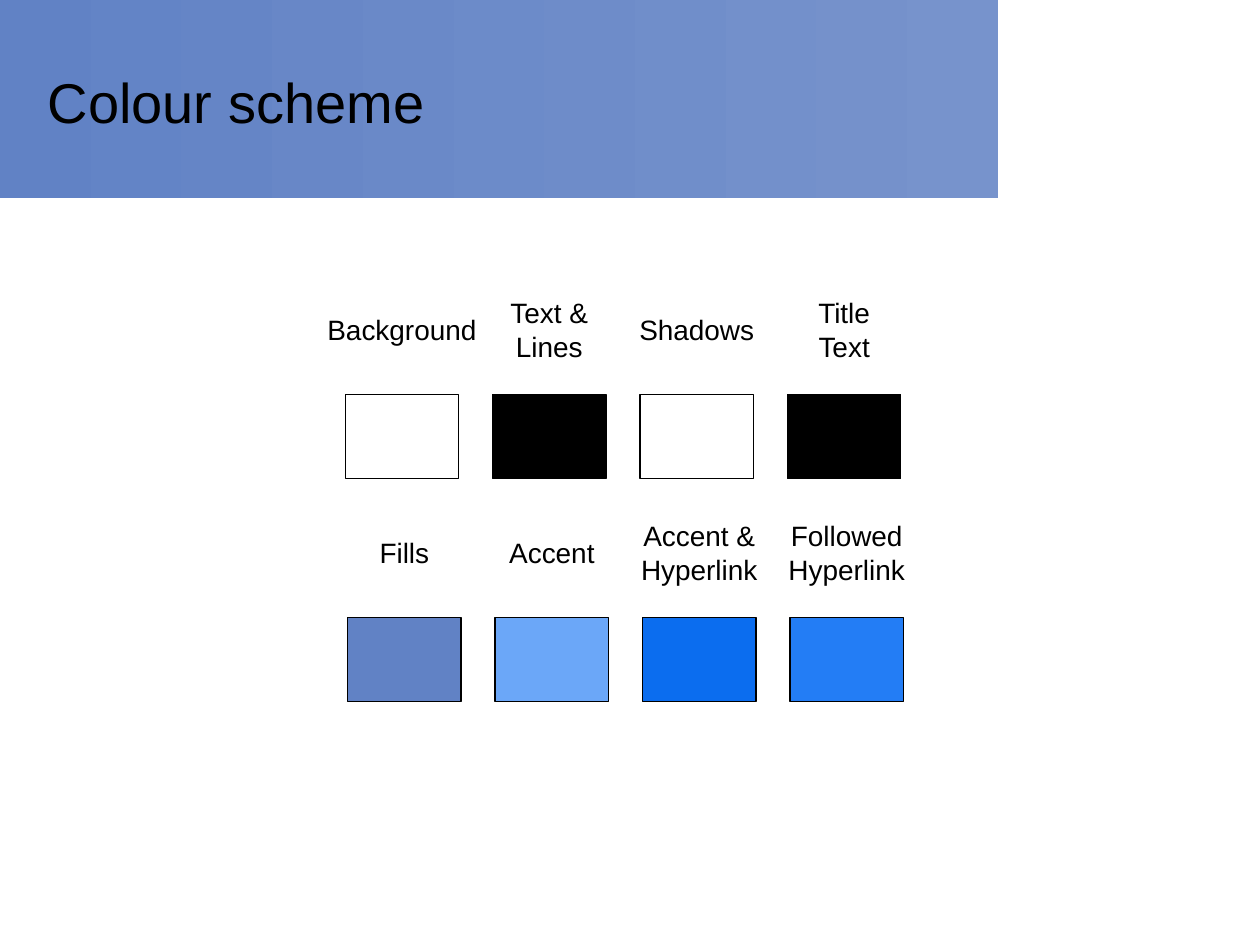
"""Build a slide that shows the eight colours of a scheme on a grid."""
from dataclasses import dataclass
from typing import Any

from pptx import Presentation
from pptx.dml.color import RGBColor as Rgb
from pptx.enum.shapes import MSO_SHAPE as Kind
from pptx.enum.text import MSO_ANCHOR as Anchor, MSO_AUTO_SIZE as Fit, PP_ALIGN as Align
from pptx.util import Inches, Pt


@dataclass(frozen=True)
class Theme:
    font: str = "Arial"
    ink: str = "000000"
    band: tuple[str, str] = ("6182C5", "7793CC")
    title: int = 32
    label: int = 16
    line: float = 0.75


@dataclass(frozen=True)
class Box:
    left: float
    top: float
    width: float
    height: float

    def emu(self) -> list[int]:
        return [Inches(v) for v in (self.left, self.top, self.width, self.height)]


@dataclass(frozen=True)
class Grid:
    left: float = 2.74
    top: float = 3.13
    col: float = 1.17
    row: float = 1.77
    shift: float = 0.02
    width: float = 0.9
    height: float = 0.67
    rise: float = 0.51

    def cell(self, row: int, col: int) -> Box:
        left = self.left + col * self.col + row * self.shift
        return Box(left, self.top + row * self.row, self.width, self.height)

    def head(self, row: int, col: int, width: float, lines: int) -> Box:
        cell = self.cell(row, col)
        high = 0.1 + 0.27 * lines
        mid = cell.left + cell.width / 2
        return Box(mid - width / 2, cell.top - self.rise - high / 2, width, high)


@dataclass(frozen=True)
class Swatch:
    label: str
    fill: str
    width: float


THEME = Theme()
GRID = Grid()
WIDE, HIGH = 10, 7.5
ROWS = (
    (
        Swatch("Background", "FFFFFF", 1.41),
        Swatch("Text &\nLines", "000000", 0.86),
        Swatch("Shadows", "FFFFFF", 1.14),
        Swatch("Title\vText", "000000", 0.66),
    ),
    (
        Swatch("Fills", "6182C5", 0.63),
        Swatch("Accent", "6BA7F8", 0.91),
        Swatch("Accent &\nHyperlink", "0B6DEF", 1.16),
        Swatch("Followed\nHyperlink", "237DF5", 1.16),
    ),
)


def style(item: Any, form: dict[str, Any]) -> None:
    for name, value in form.items():
        setattr(item, name, value)


def write(slide: Any, box: Box, text: str, size: int, align: Align, frame: dict[str, Any]) -> None:
    body = slide.shapes.add_textbox(*box.emu()).text_frame
    body.text = text
    style(body, frame)
    for para in body.paragraphs:
        para.alignment = align
        for run in para.runs:
            style(run.font, {"name": THEME.font, "size": Pt(size)})
            run.font.color.rgb = Rgb.from_string(THEME.ink)


def block(slide: Any, box: Box) -> Any:
    shape = slide.shapes.add_shape(Kind.RECTANGLE, *box.emu())
    shape.shadow.inherit = False
    return shape


def banner(slide: Any) -> None:
    shape = block(slide, Box(0, 0, 7.92, 0.21 * HIGH))
    shape.line.fill.background()
    shape.fill.gradient()
    shape.fill.gradient_angle = 0
    for stop, tone in zip(shape.fill.gradient_stops, THEME.band):
        stop.color.rgb = Rgb.from_string(tone)
    title = Box(0.28, 0.04 * HIGH, 0.75 * WIDE, 1.01)
    form = {"word_wrap": True, "vertical_anchor": Anchor.MIDDLE}
    write(slide, title, "Colour scheme", THEME.title, Align.LEFT, form)


def sample(slide: Any, item: Swatch, row: int, col: int) -> None:
    shape = block(slide, GRID.cell(row, col))
    shape.fill.solid()
    shape.fill.fore_color.rgb = Rgb.from_string(item.fill)
    shape.line.color.rgb = Rgb.from_string(THEME.ink)
    shape.line.width = Pt(THEME.line)
    head = GRID.head(row, col, item.width, len(item.label.splitlines()))
    form = {"word_wrap": False, "auto_size": Fit.SHAPE_TO_FIT_TEXT}
    write(slide, head, item.label, THEME.label, Align.CENTER, form)


def main() -> None:
    deck = Presentation()
    style(deck, {"slide_width": Inches(WIDE), "slide_height": Inches(HIGH)})
    slide = deck.slides.add_slide(deck.slide_layouts[6])
    banner(slide)
    for row, items in enumerate(ROWS):
        for col, item in enumerate(items):
            sample(slide, item, row, col)
    deck.save("out.pptx")


if __name__ == "__main__":
    main()
